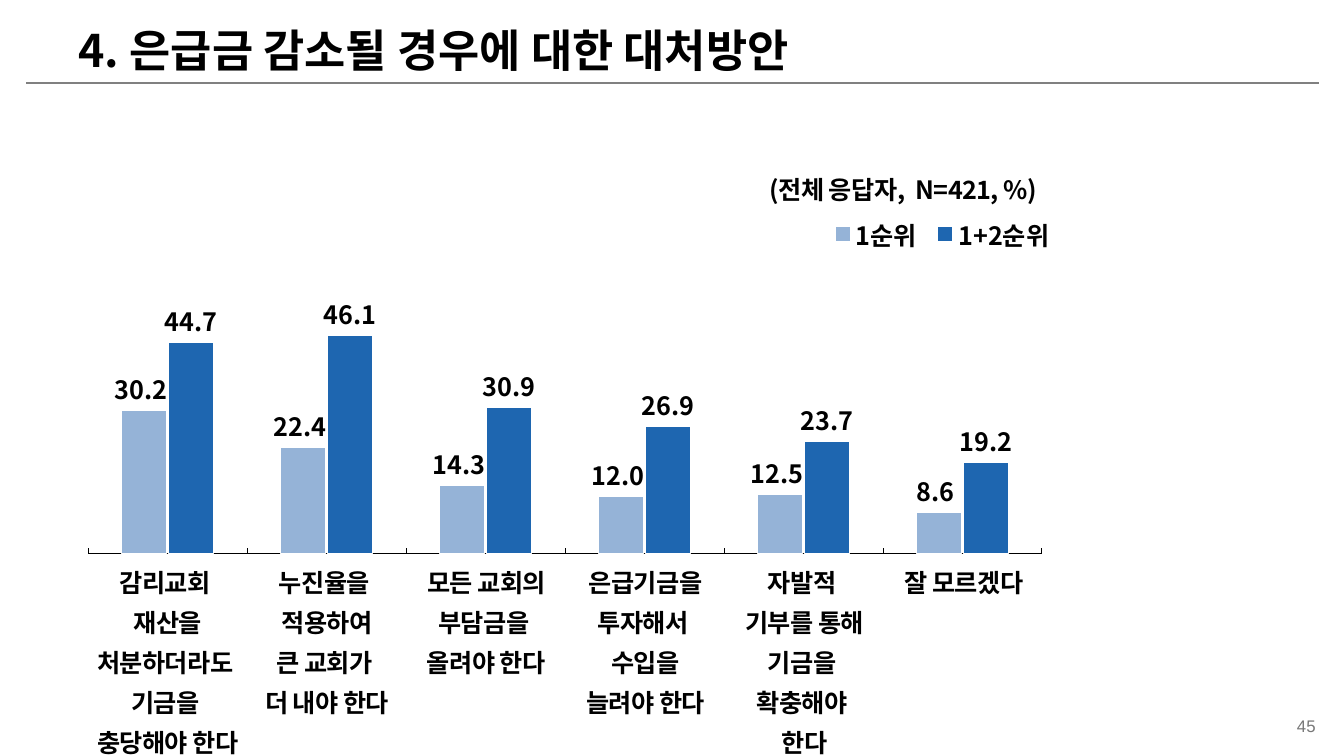
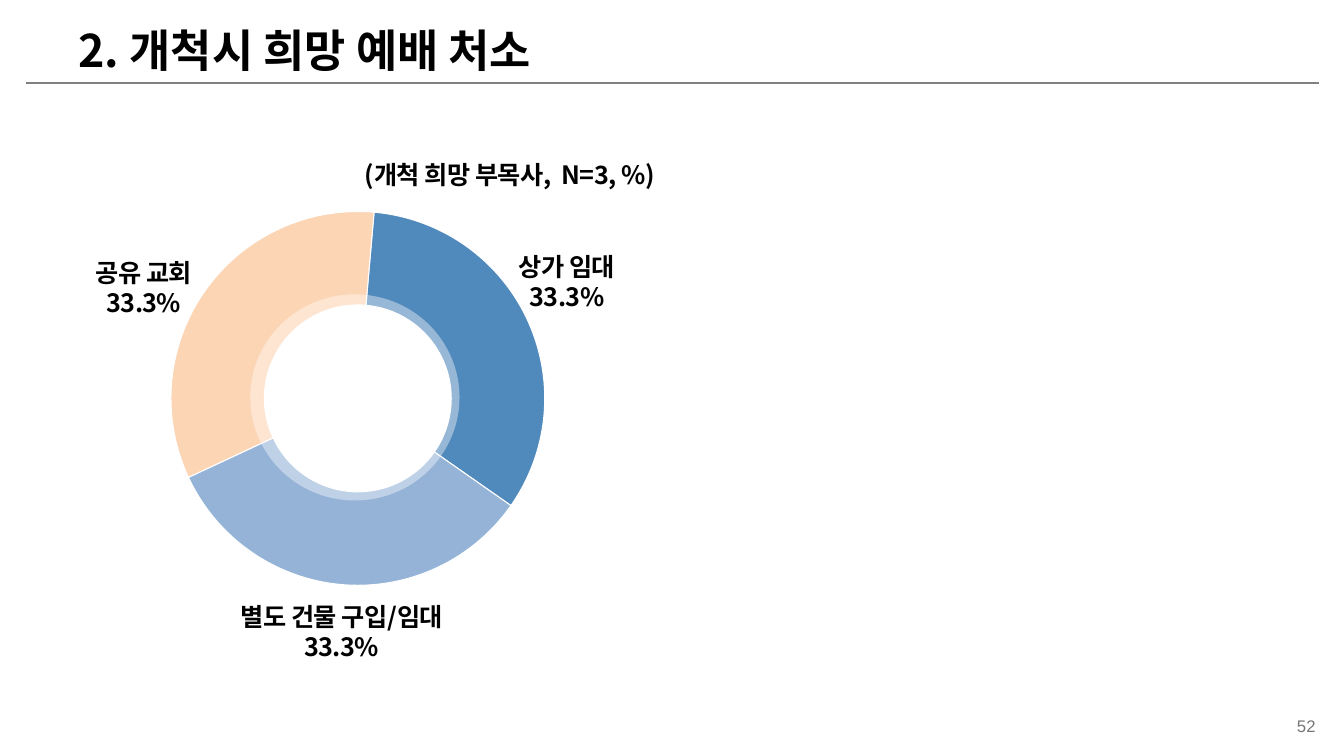
from pptx import Presentation
from pptx.chart.data import CategoryChartData
from pptx.dml.color import RGBColor
from pptx.enum.chart import XL_CHART_TYPE, XL_LABEL_POSITION, XL_LEGEND_POSITION, XL_TICK_LABEL_POSITION, XL_TICK_MARK
from pptx.enum.shapes import MSO_CONNECTOR, MSO_SHAPE
from pptx.enum.text import MSO_ANCHOR, PP_ALIGN
from pptx.oxml.ns import qn
from pptx.util import Pt
from lxml.etree import SubElement

PX = 9525
KR = "Noto Sans CJK KR"
BLACK, WHITE, GRAY, PAGE = "000000", "FFFFFF", "808080", "777777"
LIGHT, BLUE, STEEL, PEACH = "95B3D7", "1E66B0", "5089BC", "FCD5B5"
rgb = RGBColor.from_string


def write(tf, lines, size=18, font=KR, color=BLACK, bold=True, align=PP_ALIGN.LEFT, spacing=1.0, track=-40):
    for i, line in enumerate(lines):
        p = tf.paragraphs[0] if i == 0 else tf.add_paragraph()
        p.text = line
        p.alignment = align
        p.line_spacing = spacing
        for r in p.runs:
            r.font.size, r.font.name, r.font.bold = Pt(size), font, bold
            r.font.color.rgb = rgb(color)
            rPr = r._r.get_or_add_rPr()
            rPr.set("spc", str(track))
            SubElement(rPr, qn("a:ea")).set("typeface", font)


def place(parent, index, inner, **fractions):
    for old in parent.findall(qn("c:layout")):
        parent.remove(old)
    layout = SubElement(parent, qn("c:layout"))
    parent.insert(index, layout)
    manual = SubElement(layout, qn("c:manualLayout"))
    if inner:
        SubElement(manual, qn("c:layoutTarget")).set("val", "inner")
    for key in ("xMode", "yMode"):
        SubElement(manual, qn("c:" + key)).set("val", "edge")
    for key, value in fractions.items():
        SubElement(manual, qn("c:" + key)).set("val", str(value))


prs = Presentation()
prs.slide_width, prs.slide_height = 1280 * PX, 720 * PX
layout = prs.slide_layouts[5]
for ph in list(layout.placeholders):
    if ph.placeholder_format.idx:
        ph.element.getparent().remove(ph.element)
title = layout.placeholders[0]
title.left, title.top, title.width, title.height = [n * PX for n in (65, 17, 1100, 61)]

slides = []
for heading, page in [("4. 은급금 감소될 경우에 대한 대처방안", "45"), ("2. 개척시 희망 예배 처소", "52")]:
    s = prs.slides.add_slide(layout)
    tf = s.shapes.title.text_frame
    tf.vertical_anchor = MSO_ANCHOR.MIDDLE
    write(tf, [heading], size=32, track=0)
    tf = s.shapes.add_textbox(*[n * PX for n in (1195, 677, 60, 29)]).text_frame
    tf.margin_left = tf.margin_right = 2 * PX
    tf.vertical_anchor = MSO_ANCHOR.BOTTOM
    tf.word_wrap = True
    write(tf, [page], size=12, font="Arial", color=PAGE, bold=False, align=PP_ALIGN.RIGHT, track=0)
    slides.append(s)
ways, places = slides

rule = ways.shapes.add_connector(MSO_CONNECTOR.STRAIGHT, *[n * PX for n in (25, 79, 1256, 79)])
rule.line.color.rgb = rgb(GRAY)
rule.line.width = Pt(1)
SubElement(rule.element.spPr, qn("a:effectLst"))
layout.shapes.element.append(rule.element)

cd = CategoryChartData()
cd.categories = ["1", "2", "3", "4", "5", "6"]
cd.add_series("1순위", (30.2, 22.4, 14.3, 12.0, 12.5, 8.6))
cd.add_series("1+2순위", (44.7, 46.1, 30.9, 26.9, 23.7, 19.2))
chart = ways.shapes.add_chart(XL_CHART_TYPE.COLUMN_CLUSTERED, *[n * PX for n in (65, 180, 946, 358)], cd).chart
chart.has_title = False
chart.has_legend = True
chart.legend.position = XL_LEGEND_POSITION.RIGHT
chart.legend.include_in_layout = False
fonts = [chart.font, chart.legend.font]
plot = chart.plots[0]
plot.gap_width, plot.overlap = 150, -5
plot.vary_by_categories = False
for ser, color, fmt in zip(plot.series, (LIGHT, BLUE), ("0.0_ ", "#,##0.0")):
    ser.format.fill.solid()
    ser.format.fill.fore_color.rgb = rgb(color)
    ser.format.line.color.rgb = rgb(WHITE)
    ser.format.line.width = Pt(0.75)
    labels = ser.data_labels
    labels.show_value = True
    labels.position = XL_LABEL_POSITION.OUTSIDE_END
    labels.number_format, labels.number_format_is_linked = fmt, False
    fonts.append(labels.font)
for font in fonts:
    font.name, font.size, font.bold = KR, Pt(18), True
    font.color.rgb = rgb(BLACK)
for rPr in list(chart._chartSpace.iter(qn("a:defRPr"))):
    if rPr.find(qn("a:latin")) is not None:
        SubElement(rPr, qn("a:ea")).set("typeface", KR)
cat, val = chart.category_axis, chart.value_axis
cat.tick_label_position = val.tick_label_position = XL_TICK_LABEL_POSITION.NONE
cat.major_tick_mark = XL_TICK_MARK.INSIDE
cat.format.line.color.rgb = rgb(BLACK)
cat.format.line.width = Pt(0.25)
val.minimum_scale, val.maximum_scale = 0, 70
val.has_major_gridlines = False
val.format.line.fill.background()
place(chart._chartSpace.chart.plotArea, 0, True, x=0.02, y=0.09, w=0.96, h=0.88)
place(chart.legend._element, 1, False, x=0.76, y=0.07, w=0.24, h=0.1)

answers = [
    ["감리교회 \n재산을", "처분하더라도 ", "기금을 \n충당해야 한다"],
    ["누진율을 \n적용하여", "큰 교회가 \n더 내야 한다"],
    ["모든 교회의 부담금을 \n올려야 한다"],
    ["은급기금을", "투자해서 \n수입을", "늘려야 한다"],
    ["자발적 \n기부를 통해", "기금을 \n확충해야 \n한다"],
    ["잘 모르겠다"],
]
table = ways.shapes.add_table(1, len(answers), *[n * PX for n in (84, 532, 910, 62)]).table
table.first_row = table.horz_banding = False
for cell, lines in zip(table.rows[0].cells, answers):
    cell.fill.background()
    cell.margin_left = cell.margin_right = cell.margin_top = PX
    cell.margin_bottom = 0
    write(cell.text_frame, lines, align=PP_ALIGN.CENTER, spacing=1.1)

cd = CategoryChartData()
cd.categories = ["1", "2", "3"]
cd.add_series("Series 1", (33, 33, 33))
chart = places.shapes.add_chart(XL_CHART_TYPE.DOUGHNUT, *[n * PX for n in (151, 186, 376, 387)], cd).chart
chart.has_title = chart.has_legend = False
chart.font.name, chart.font.size = "Calibri", Pt(18)
plot = chart.plots[0]
plot.has_data_labels = False
for i, color in enumerate((STEEL, LIGHT, PEACH)):
    fmt = plot.series[0].points[i].format
    fmt.fill.solid()
    fmt.fill.fore_color.rgb = rgb(color)
    fmt.line.color.rgb = rgb(WHITE)
    fmt.line.width = Pt(0.75)
for tag, value in (("c:holeSize", "48"), ("c:firstSliceAng", "5")):
    next(chart._chartSpace.iter(qn(tag))).set("val", value)
place(chart._chartSpace.chart.plotArea, 0, True, x=0.03, y=0.04, w=0.95, h=0.92)

ring = places.shapes.add_shape(MSO_SHAPE.OVAL, *[n * PX for n in (245, 287, 186, 183)])
ring.shadow.inherit = False
ring.fill.background()
ring.line.color.rgb = rgb(WHITE)
ring.line.width = Pt(10)
SubElement(next(ring.line._ln.iter(qn("a:srgbClr"))), qn("a:alpha")).set("val", "40000")

for s, box, lines, align in [
    (ways, (723, 161, 295, 38), ["(전체 응답자,  N=421, %)"], PP_ALIGN.LEFT),
    (places, (338, 147, 324, 38), ["(개척 희망 부목사,  N=3, %)"], PP_ALIGN.LEFT),
    (places, (479, 228, 122, 80), ["상가 임대", "33.3%"], PP_ALIGN.CENTER),
    (places, (208, 561, 235, 80), ["별도 건물 구입/임대", "33.3%"], PP_ALIGN.CENTER),
    (places, (76, 234, 122, 80), ["공유 교회", "33.3%"], PP_ALIGN.CENTER),
]:
    tf = s.shapes.add_textbox(*[n * PX for n in box]).text_frame
    tf.word_wrap = True
    tf.vertical_anchor = MSO_ANCHOR.MIDDLE
    write(tf, lines, align=align)

prs.save("out.pptx")
